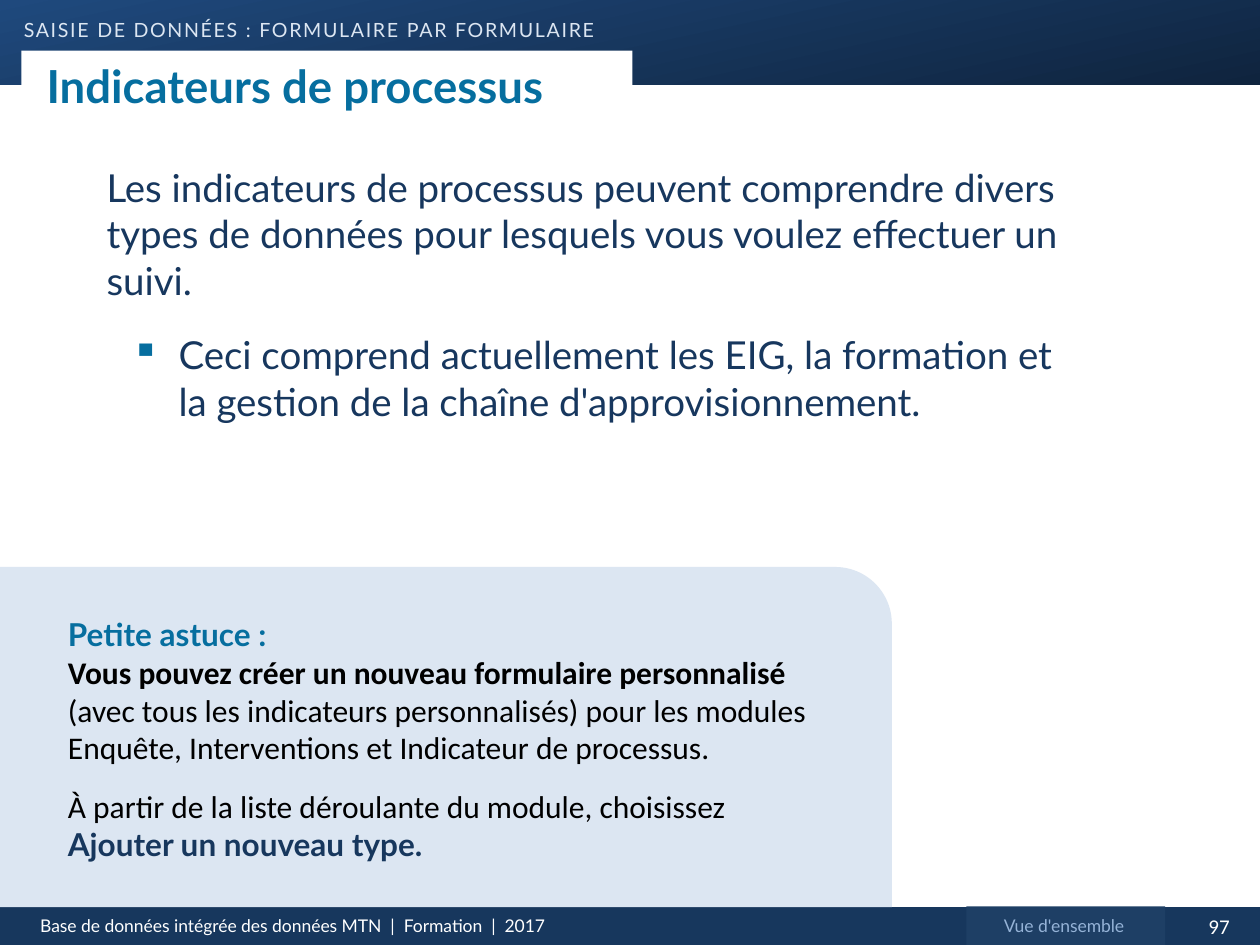
from pptx import Presentation
from pptx.dml.color import RGBColor
from pptx.enum.shapes import MSO_SHAPE
from pptx.enum.text import MSO_ANCHOR, PP_ALIGN
from pptx.oxml.ns import qn
from pptx.util import Cm, Pt
from lxml.etree import SubElement

COLOURS = {
    "white": "FFFFFF", "black": "000000", "navy": "17375D", "ink": "17375E",
    "teal": "066E9F", "pale": "DCE6F2", "tab": "1E3F65", "sky": "95B3D7",
    "band_start": "1F497D", "band_end": "0F243E",
}


def colour(name):
    return RGBColor.from_string(COLOURS[name])


class SlideBuilder:
    """Holds the text style and the current page."""

    def __init__(self, page, font="Lato"):
        self.page = page
        self.font = font

    def panel(self, left, top, width, height, fill, kind=MSO_SHAPE.RECTANGLE):
        shape = self.page.shapes.add_shape(
            kind, Cm(left), Cm(top), Cm(width), Cm(height))
        shape.shadow.inherit = False
        shape.line.fill.background()
        shape.fill.solid()
        shape.fill.fore_color.rgb = colour(fill)
        return shape

    def gradient(self, shape, names, angle):
        shape.fill.gradient()
        shape.fill.gradient_angle = angle
        for stop, name, position in zip(shape.fill.gradient_stops, names, (0, 1)):
            stop.color.rgb = colour(name)
            stop.position = position

    def text_box(self, left, top, width, height, inset=0.25):
        box = self.page.shapes.add_textbox(
            Cm(left), Cm(top), Cm(width), Cm(height))
        return self.frame(box, inset)

    def frame(self, shape, inset):
        frame = shape.text_frame
        frame.word_wrap = True
        frame.margin_left = frame.margin_right = Cm(inset)
        frame.margin_top = frame.margin_bottom = Cm(0.13)
        return frame

    def paragraph(self, frame, align=PP_ALIGN.LEFT, before=0, after=0):
        first = frame.paragraphs[0]
        para = frame.add_paragraph() if first.runs else first
        para.alignment = align
        para.space_before, para.space_after = Pt(before), Pt(after)
        return para

    def span(self, para, text, size, ink, bold=False, font=None):
        span = para.add_run()
        span.text = text
        span.font.name = font or self.font
        span.font.size = Pt(size)
        span.font.bold = bold
        span.font.color.rgb = colour(ink)
        return span

    def bullet(self, para, symbol, ink, indent, hanging):
        props = para._p.get_or_add_pPr()
        props.set("marL", str(Cm(indent)))
        props.set("indent", str(-Cm(hanging)))
        tint = SubElement(props, qn("a:buClr"))
        SubElement(tint, qn("a:srgbClr"), val=COLOURS[ink])
        SubElement(props, qn("a:buChar"), char=symbol)


def main():
    deck = Presentation()
    deck.slide_width, deck.slide_height = Cm(25.4), Cm(19.05)
    page = deck.slides.add_slide(deck.slide_layouts[6])
    build = SlideBuilder(page)

    # Header band and footer bar
    band = build.panel(0, 0, 25.43, 1.7, "band_start")
    build.gradient(band, ("band_start", "band_end"), 282)
    build.panel(0, 18.29, 25.43, 0.81, "navy")
    build.panel(19.48, 18.27, 4.01, 0.79, "tab")

    # Footer texts
    footers = [
        (23.75, 18.29, 1.65, "97", 12, "white", PP_ALIGN.CENTER, "Calibri"),
        (0.56, 18.31, 11.51,
         "Base de données intégrée des données MTN  |  Formation  |  2017",
         10, "white", PP_ALIGN.LEFT, "Lato"),
        (19.48, 18.31, 3.94, "Vue d'ensemble", 10, "sky", PP_ALIGN.CENTER, "Lato"),
    ]
    for left, top, width, text, size, ink, align, font in footers:
        frame = build.text_box(left, top, width, 0.69)
        build.span(build.paragraph(frame, align), text, size, ink, font=font)

    # Section heading in spaced small capitals
    frame = build.text_box(0.48, 0.13, 12.22, 0.86, inset=0)
    section = build.span(build.paragraph(frame),
                         "saisie de données\u00a0: formulaire par formulaire",
                         14, "pale")
    section_props = section.font._element
    section_props.set("cap", "small")
    section_props.set("spc", "100")

    # Title tab
    title = build.panel(0.43, 1.02, 12.32, 1.42, "white",
                        MSO_SHAPE.ROUND_2_SAME_RECTANGLE)
    title.adjustments[0] = 0
    frame = build.frame(title, 0.51)
    frame.vertical_anchor = MSO_ANCHOR.MIDDLE
    build.span(build.paragraph(frame), "Indicateurs de processus", 26, "teal", True)

    # Main text
    frame = build.text_box(1.9, 3.18, 19.89, 8.05)
    build.span(build.paragraph(frame, after=12),
               "Les indicateurs de processus peuvent comprendre divers types de "
               "données pour lesquels vous voulez effectuer un suivi.", 22, "ink")
    para = build.paragraph(frame, before=4.4)
    build.bullet(para, "▪", "teal", 1.45, 0.95)
    build.span(para, "Ceci comprend actuellement les EIG, la formation et la "
               "gestion de la chaîne d'approvisionnement.", 22, "ink")

    # Tip panel
    build.panel(0, 11.43, 17.98, 6.86, "pale", MSO_SHAPE.ROUND_1_RECTANGLE)
    frame = build.text_box(1.12, 12.27, 15.6, 5.31)
    build.span(build.paragraph(frame), "Petite astuce\u00a0:", 18, "teal", True)
    para = build.paragraph(frame, after=12)
    build.span(para, "Vous pouvez créer un nouveau formulaire personnalisé",
               18, "black", True, "Calibri")
    build.span(para, " (avec tous les indicateurs personnalisés) pour les modules "
               "Enquête, Interventions et Indicateur de processus.",
               18, "black", font="Calibri")
    para = build.paragraph(frame)
    build.span(para, "À partir de la liste déroulante du module, choisissez ",
               18, "black", font="Calibri")
    build.span(para, "Ajouter un nouveau type.", 18, "navy", True)

    deck.save("out.pptx")


if __name__ == "__main__":
    main()
